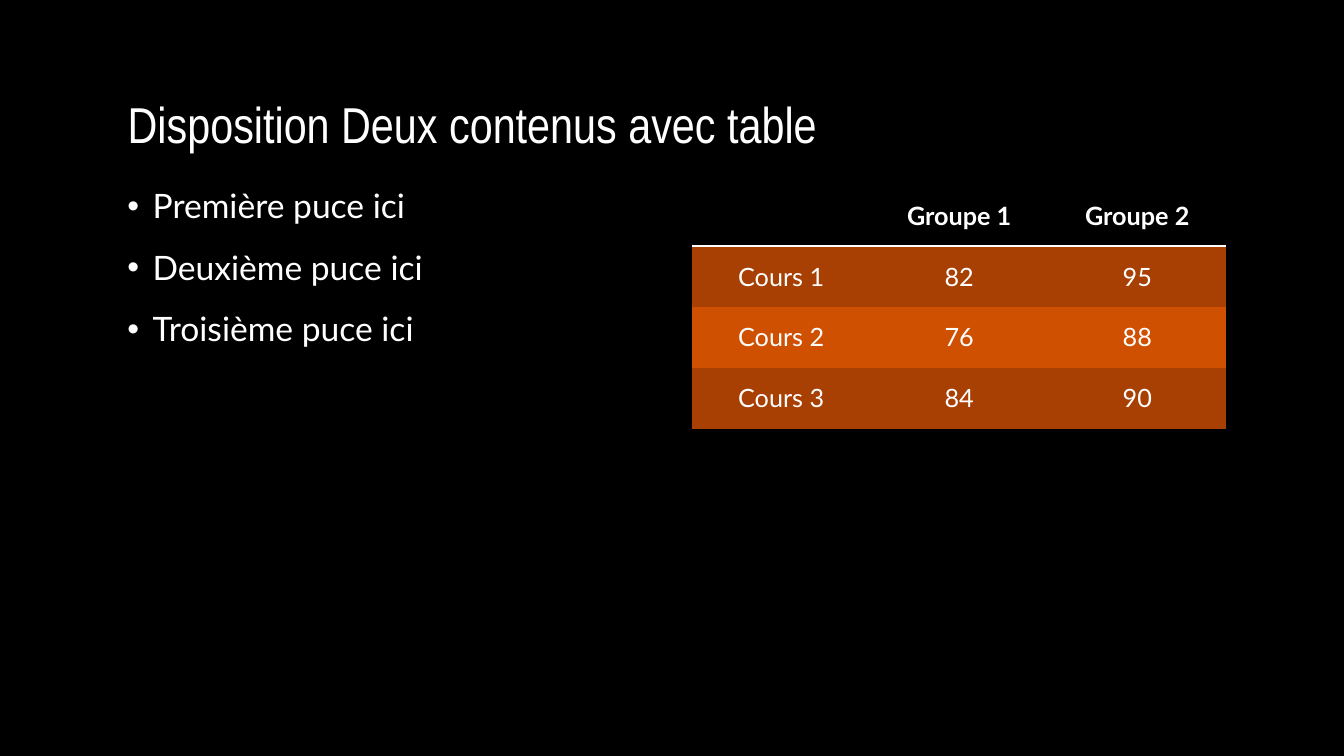
import pptx
import pptx.util
import pptx.dml.color
import pptx.enum.text
import pptx.oxml
import pptx.oxml.ns
import pptx.oxml.xmlchemy

Pt = pptx.util.Pt
Align = pptx.enum.text.PP_ALIGN
Anchor = pptx.enum.text.MSO_ANCHOR

TITLE = "Disposition Deux contenus avec table"
BULLETS = ["Première puce ici", "Deuxième puce ici", "Troisième puce ici"]
GRID = [
    ["", "Groupe 1", "Groupe 2"],
    ["Cours 1", "82", "95"],
    ["Cours 2", "76", "88"],
    ["Cours 3", "84", "90"],
]
BLACK, WHITE = "000000", "FFFFFF"
BANDS = ["A74002", "D05002"]
NO_STYLE = "{2D5ABB26-0587-4C30-8999-92F81FD0307C}"

LEFT, TOP = 84, 132
WIDE, HALF = 792, 381.6
ROW = 43.56
INDENT = 18


def rgb(code):
    return pptx.dml.color.RGBColor.from_string(code)


def style(para, name, size, bold=False):
    font = para.font
    font.name, font.size, font.bold = name, Pt(size), bold
    font.color.rgb = rgb(WHITE)


def add_bullet(para):
    props = para._p.get_or_add_pPr()
    props.set("marL", str(Pt(INDENT)))
    props.set("indent", str(-Pt(INDENT)))
    for tag, key, value in (("buFont", "typeface", "Arial"), ("buChar", "char", "•")):
        mark = pptx.oxml.xmlchemy.OxmlElement(f"a:{tag}")
        mark.set(key, value)
        props.append(mark)


def rule_below(cell, code, width):
    """Draw a line along the bottom edge of a cell."""
    line = pptx.oxml.parse_xml(
        f'<a:lnB {pptx.oxml.ns.nsdecls("a")} w="{Pt(width)}">'
        f'<a:solidFill><a:srgbClr val="{code}"/></a:solidFill></a:lnB>')
    cell._tc.get_or_add_tcPr().insert(0, line)


def add_title(slide):
    title = slide.shapes.title
    title.left, title.top, title.width, title.height = map(Pt, (LEFT, 24, WIDE, 90))
    frame = title.text_frame
    frame.text = TITLE
    frame.auto_size = pptx.enum.text.MSO_AUTO_SIZE.NONE
    frame.vertical_anchor = Anchor.BOTTOM
    para = frame.paragraphs[0]
    para.alignment, para.line_spacing = Align.LEFT, 0.9
    style(para, "Arial Narrow", 36)


def add_list(slide):
    frame = slide.shapes.add_textbox(*map(Pt, (LEFT, TOP, HALF, 342))).text_frame
    frame.word_wrap = True
    frame.text = "\n".join(BULLETS)
    for i, para in enumerate(frame.paragraphs):
        para.line_spacing = 0.9
        if i:
            para.space_before = Pt(18)
        add_bullet(para)
        style(para, "Lato", 24)


def add_grid(slide):
    rows, cols = len(GRID), len(GRID[0])
    place = map(Pt, (LEFT + WIDE - HALF, TOP, HALF, ROW * rows))
    table = slide.shapes.add_table(rows, cols, *place).table
    table.horz_banding = False
    table._tbl.tblPr.find(pptx.oxml.ns.qn("a:tableStyleId")).text = NO_STYLE
    for col in table.columns:
        col.width = Pt(HALF / cols)
    for r, row in enumerate(GRID):
        table.rows[r].height = Pt(ROW)
        for c, text in enumerate(row):
            cell = table.cell(r, c)
            cell.text = text
            cell.vertical_anchor = Anchor.MIDDLE
            cell.fill.solid()
            cell.fill.fore_color.rgb = rgb(BANDS[(r - 1) % 2] if r else BLACK)
            para = cell.text_frame.paragraphs[0]
            para.alignment = Align.CENTER
            style(para, "Lato", 18, bold=r == 0)
            if r == 0:
                rule_below(cell, WHITE, 2)


def main():
    deck = pptx.Presentation()
    deck.slide_width, deck.slide_height = Pt(960), Pt(540)
    slide = deck.slides.add_slide(deck.slide_layouts[5])
    slide.background.fill.solid()
    slide.background.fill.fore_color.rgb = rgb(BLACK)
    add_title(slide)
    add_list(slide)
    add_grid(slide)
    deck.save("out.pptx")


if __name__ == "__main__":
    main()
